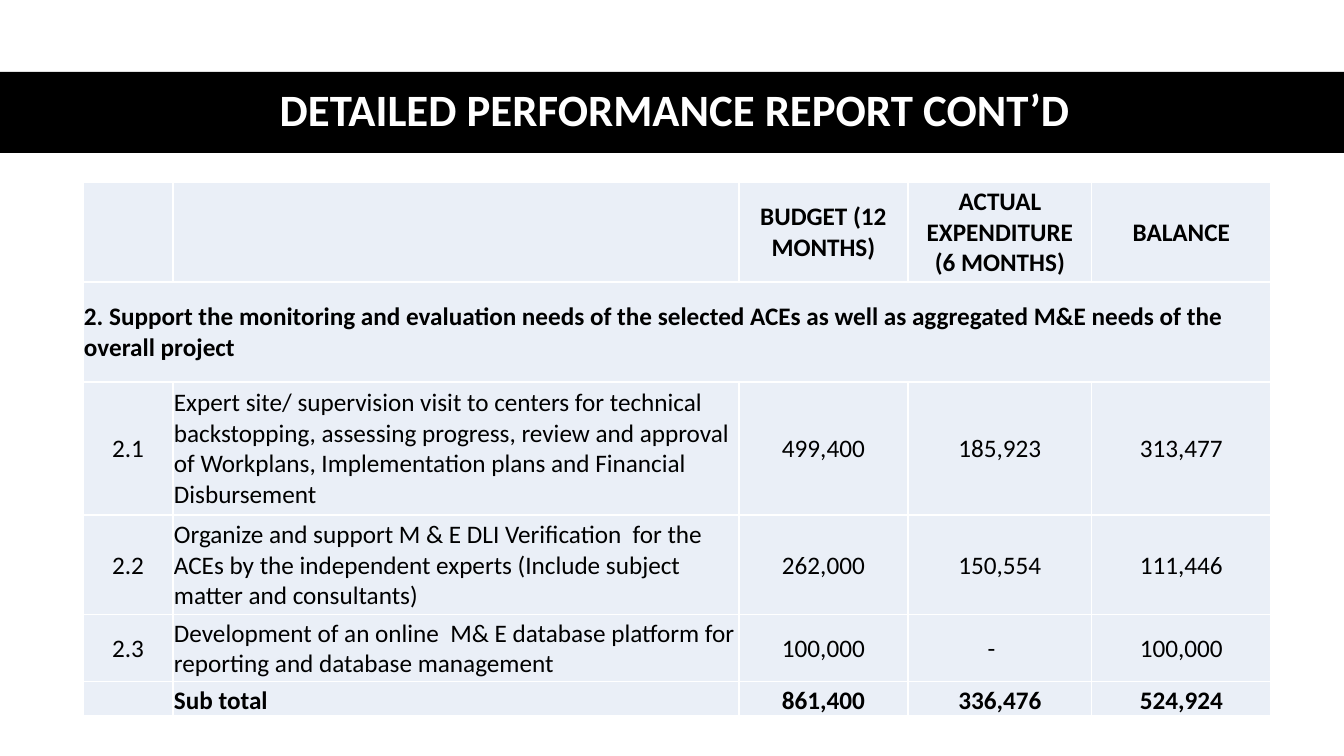
from lxml import etree
from pptx import Presentation
from pptx.dml.color import RGBColor
from pptx.enum.shapes import MSO_SHAPE
from pptx.enum.text import MSO_ANCHOR, PP_ALIGN
from pptx.oxml.ns import qn
from pptx.util import Pt

RECT = MSO_SHAPE.RECTANGLE
MIDDLE, BOTTOM = MSO_ANCHOR.MIDDLE, MSO_ANCHOR.BOTTOM
LEFT, CENTER = PP_ALIGN.LEFT, PP_ALIGN.CENTER
FONT = "Calibri"
BLACK, WHITE, PALE = "000000", "FFFFFF", "EAEFF7"
SLIDE_W, SLIDE_H = 1344, 756

COLS = [90, 566, 169, 184, 179]
ROWS = [100, 100, 133, 100, 67, 34]
DATA = [
    ["", "", "BUDGET (12 MONTHS)", "ACTUAL EXPENDITURE\v(6 MONTHS)", "BALANCE"],
    ["2. Support the monitoring and evaluation needs of the selected ACEs "
     "as well as aggregated M&E needs of the overall project"],
    ["2.1", "Expert site/ supervision visit to centers for technical "
     "backstopping, assessing progress, review and approval of Workplans, "
     "Implementation plans and Financial Disbursement",
     "499,400", "185,923", "313,477"],
    ["2.2", "Organize and support M & E DLI Verification  for the ACEs by the "
     "independent experts (Include subject matter and consultants)",
     "262,000", "150,554", "111,446"],
    ["2.3", "Development of an online  M& E database platform for reporting "
     "and database management", "100,000", "-", "100,000"],
    ["", "Sub total", "861,400", "336,476", "524,924"],
]
SECTION_ROW, TOTAL_ROW = 1, len(DATA) - 1
BOLD_ROWS = {0, SECTION_ROW, TOTAL_ROW}


def px(n):
    return round(n * 914400 / 100.8)


def rgb(color):
    return RGBColor.from_string(color)


def set_attrs(obj, **values):
    for name, value in values.items():
        setattr(obj, name, value)


def write(p, text, size, color, bold, align):
    p.text = text
    p.alignment = align
    for r in p.runs:
        set_attrs(r.font, name=FONT, size=Pt(size), bold=bold)
        r.font.color.rgb = rgb(color)


def add_band(s, left, top, width, height):
    sp = s.shapes.add_shape(RECT, px(left), px(top), px(width), px(height))
    sp.shadow.inherit = False
    sp.fill.solid()
    sp.fill.fore_color.rgb = rgb(BLACK)
    sp.line.fill.background()
    # Send the band behind the title
    s.shapes._spTree.insert(2, sp._element)


def set_title(s, text, left, top, width, height):
    sp = s.shapes.title
    set_attrs(sp, left=px(left), top=px(top), width=px(width), height=px(height))
    tf = sp.text_frame
    set_attrs(tf, word_wrap=True, vertical_anchor=MIDDLE)
    p = tf.paragraphs[0]
    write(p, text, 32, WHITE, True, CENTER)
    set_attrs(p, line_spacing=0.9, space_after=Pt(6))


def add_borders(cell, color):
    tc_pr = cell._tc.get_or_add_tcPr()
    for side in ("a:lnL", "a:lnR", "a:lnT", "a:lnB"):
        ln = etree.SubElement(tc_pr, qn(side), w=str(Pt(1)))
        fill = etree.SubElement(ln, qn("a:solidFill"))
        etree.SubElement(fill, qn("a:srgbClr"), val=color)


def format_cell(cell, anchor):
    set_attrs(cell, margin_left=px(1), margin_right=px(1), margin_top=px(1),
              margin_bottom=0, vertical_anchor=anchor)
    add_borders(cell, WHITE)
    cell.fill.solid()
    cell.fill.fore_color.rgb = rgb(PALE)


def add_budget_table(s, left, top):
    frame = s.shapes.add_table(len(ROWS), len(COLS), px(left), px(top),
                               px(sum(COLS)), px(sum(ROWS)))
    table = frame.table
    set_attrs(table, first_row=False, horz_banding=False)
    for col, width in zip(table.columns, COLS):
        col.width = px(width)
    for row, height in zip(table.rows, ROWS):
        row.height = px(height)
    for i, row in enumerate(table.rows):
        for cell in row.cells:
            format_cell(cell, BOTTOM if i == TOTAL_ROW else MIDDLE)
    table.cell(SECTION_ROW, 0).merge(table.cell(SECTION_ROW, len(COLS) - 1))

    for i, texts in enumerate(DATA):
        for j, text in enumerate(texts):
            cell = table.cell(i, j)
            align = LEFT if j == 1 or i == SECTION_ROW else CENTER
            write(cell.text_frame.paragraphs[0], text, 18, BLACK,
                  i in BOLD_ROWS, align)
            # A dash for no spending sits left of centre
            if text == "-":
                cell.margin_right = px(18)


def main():
    prs = Presentation()
    set_attrs(prs, slide_width=px(SLIDE_W), slide_height=px(SLIDE_H))
    s = prs.slides.add_slide(prs.slide_layouts[5])

    # Heading
    add_band(s, 0, 72, SLIDE_W, 81)
    set_title(s, "DETAILED PERFORMANCE REPORT CONT’D", 57, 71, 1236, 81)

    # Budget by activity
    add_budget_table(s, 83, 182)
    prs.save("out.pptx")


if __name__ == "__main__":
    main()
